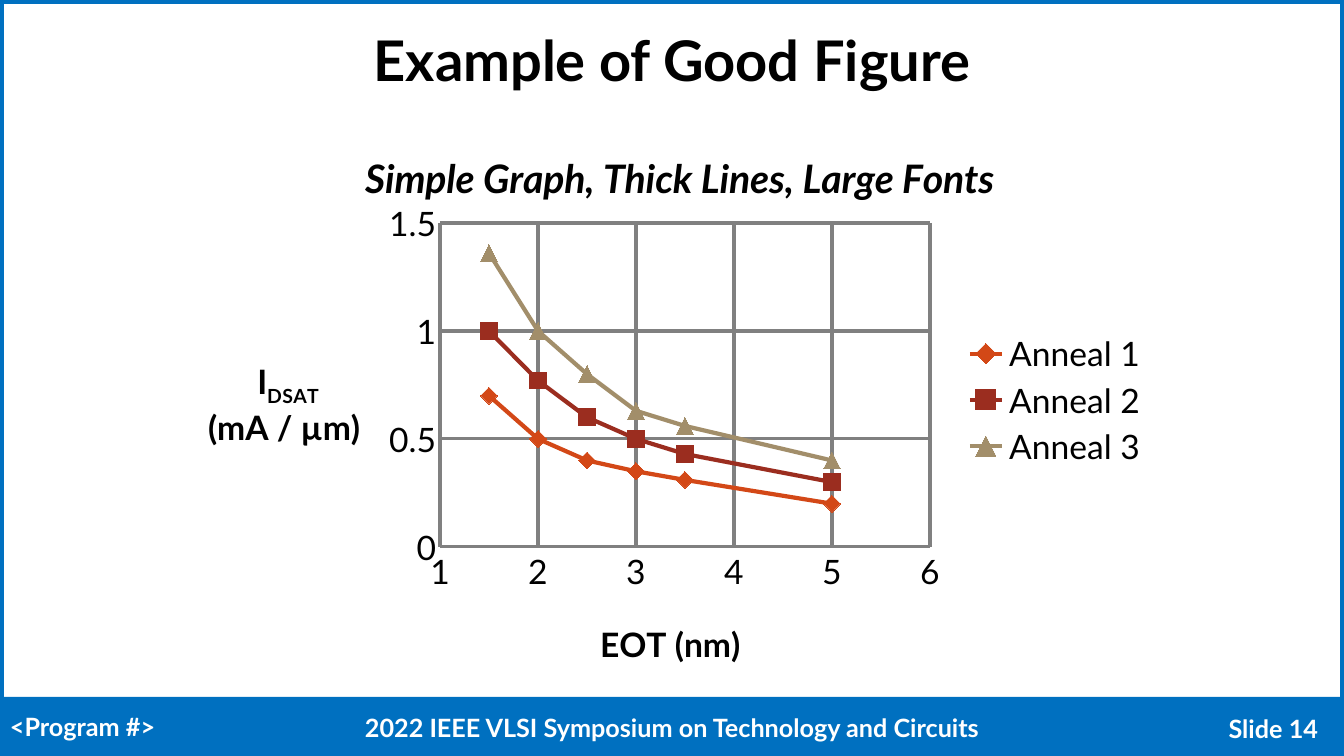
from lxml import etree
from pptx import Presentation
from pptx.chart.data import XyChartData
from pptx.dml.color import RGBColor
from pptx.enum.chart import XL_CHART_TYPE as ChartType, XL_LEGEND_POSITION as LegendPos
from pptx.enum.chart import XL_MARKER_STYLE as Marker, XL_TICK_MARK as Tick
from pptx.enum.shapes import MSO_SHAPE as Shape
from pptx.enum.text import MSO_ANCHOR as Anchor, PP_ALIGN as Align
from pptx.oxml.ns import qn
from pptx.util import Pt

PX = 914400 / 100.8
SLIDE = (0, 0, 1344, 756)
FONT = "Lato"
BLUE = RGBColor(0x00, 0x70, 0xC0)
WHITE = RGBColor(0xFF, 0xFF, 0xFF)
BLACK = RGBColor(0x00, 0x00, 0x00)
GRID_GRAY = RGBColor(0x80, 0x80, 0x80)

EOT = (1.5, 2, 2.5, 3, 3.5, 5)
ANNEALS = (
    ("Anneal 1", (0.7, 0.5, 0.4, 0.35, 0.31, 0.2), RGBColor(0xD3, 0x48, 0x17), Marker.DIAMOND),
    ("Anneal 2", (1, 0.77, 0.6, 0.5, 0.43, 0.3), RGBColor(0x9B, 0x2D, 0x1F), Marker.SQUARE),
    ("Anneal 3", (1.36, 1, 0.8, 0.63, 0.56, 0.4), RGBColor(0xA2, 0x8E, 0x6A), Marker.TRIANGLE),
)


def emu(*lengths):
    return [round(length * PX) for length in lengths]


def style(font, size, color, bold=False, italic=False):
    font.name, font.size, font.bold, font.italic = FONT, Pt(size), bold, italic
    font.color.rgb = color


def add_text(slide, box, text, size, color, align):
    frame = slide.shapes.add_textbox(*emu(*box)).text_frame
    frame.word_wrap = True
    frame.vertical_anchor = Anchor.MIDDLE
    paragraph = frame.paragraphs[0]
    paragraph.alignment = align
    run = paragraph.add_run()
    run.text = text
    style(run.font, size, color, bold=True)


def add_frame(slide, box):
    """Blue footer band and border around the slide."""
    left, top, width, height = box
    band_height = 59
    band = slide.shapes.add_shape(
        Shape.RECTANGLE, *emu(left, top + height - band_height, width, band_height))
    band.fill.solid()
    band.fill.fore_color.rgb = BLUE
    band.line.fill.background()
    border = slide.shapes.add_shape(Shape.RECTANGLE, *emu(*box))
    border.fill.background()
    border.line.color.rgb = BLUE
    border.line.width = Pt(6)
    for part in (band, border):
        part.shadow.inherit = False


def add_footer(slide, box):
    left, top, width, height = box
    add_text(slide, (left, top, 420, height), "<Program #>", 18, WHITE, Align.LEFT)
    add_text(slide, (left + 202, top + 1, width - 404, height),
             "2022 IEEE VLSI Symposium on Technology and Circuits", 18, WHITE, Align.CENTER)
    add_text(slide, (left + width - 375, top + 2, 359, height), "Slide 14", 18, WHITE, Align.RIGHT)


def place(element, chart_box, **offsets):
    """Fix the layout of a chart part; offsets are px inside the chart."""
    layout = element.find(qn("c:layout"))
    if layout is None:
        layout = etree.Element(qn("c:layout"))
        leads = (qn("c:tx"), qn("c:legendPos"))
        element.insert(sum(child.tag in leads for child in element), layout)
    for child in list(layout):
        layout.remove(child)
    manual = etree.SubElement(layout, qn("c:manualLayout"))
    settings = [("layoutTarget", "inner")] if element.tag == qn("c:plotArea") else []
    settings += [("xMode", "edge"), ("yMode", "edge")]
    spans = {"x": chart_box[2], "y": chart_box[3], "w": chart_box[2], "h": chart_box[3]}
    settings += [(key, f"{px / spans[key]:.4f}") for key, px in offsets.items()]
    for tag, value in settings:
        etree.SubElement(manual, qn("c:" + tag)).set("val", value)


def write_title(frame, lines, size, italic=False):
    """Each line is a list of (text, is_subscript) runs."""
    for index, line in enumerate(lines):
        paragraph = frame.add_paragraph() if index else frame.paragraphs[0]
        paragraph.alignment = Align.CENTER
        for text, is_subscript in line:
            run = paragraph.add_run()
            run.text = text
            style(run.font, size, BLACK, bold=True, italic=italic)
            if is_subscript:
                run.font._element.set("baseline", "-25000")


def set_axis(axis, low, high, step):
    axis.minimum_scale, axis.maximum_scale, axis.major_unit = low, high, step
    axis.major_tick_mark = axis.minor_tick_mark = Tick.NONE
    axis.has_major_gridlines = True
    for line in (axis.format.line, axis.major_gridlines.format.line):
        line.color.rgb = GRID_GRAY
        line.width = Pt(2.25)
    style(axis.tick_labels.font, 24, BLACK)
    axis.tick_labels.number_format = "General"
    axis.tick_labels.number_format_is_linked = False


def add_anneal_chart(slide, box):
    data = XyChartData()
    for name, currents, _, _ in ANNEALS:
        series = data.add_series(name)
        for point in zip(EOT, currents):
            series.add_data_point(*point)
    chart = slide.shapes.add_chart(ChartType.XY_SCATTER_LINES, *emu(*box), data).chart
    style(chart.font, 24, BLACK)

    # Lines and markers
    plot = chart.plots[0]
    plot.vary_by_categories = False
    for series, (_, _, color, marker) in zip(plot.series, ANNEALS):
        series.smooth = False
        series.format.line.color.rgb = color
        series.format.line.width = Pt(3)
        series.marker.style = marker
        series.marker.size = 12
        series.marker.format.fill.solid()
        series.marker.format.fill.fore_color.rgb = color
        series.marker.format.line.fill.background()

    # Axes
    eot_axis, current_axis = chart.category_axis, chart.value_axis
    set_axis(eot_axis, 1, 6, 1)
    set_axis(current_axis, 0, 1.5, 0.5)

    # Titles
    chart.has_title = True
    heading, eot_title, current_title = chart.chart_title, eot_axis.axis_title, current_axis.axis_title
    write_title(heading.text_frame, [[("Simple Graph, Thick Lines, Large Fonts", False)]], 28, italic=True)
    write_title(eot_title.text_frame, [[("EOT (nm)", False)]], 24)
    write_title(current_title.text_frame,
                [[("I", False), ("DSAT", True)], [("(mA / µm) ", False)]], 24)
    upright = current_title._element.find(".//" + qn("a:bodyPr"))
    upright.set("rot", "0")
    upright.set("vert", "horz")

    # Legend
    chart.has_legend = True
    chart.legend.position = LegendPos.RIGHT
    chart.legend.include_in_layout = False
    style(chart.legend.font, 24, BLACK)

    # Places inside the chart
    plot_area = chart._chartSpace.find(".//" + qn("c:plotArea"))
    place(plot_area, box, x=256, y=105, w=490, h=324)
    place(heading._element, box, x=174, y=25)
    place(eot_title._element, box, x=410, y=496)
    place(current_title._element, box, x=21, y=238)
    place(chart.legend._element, box, x=780, y=210, w=182, h=144)


def main():
    prs = Presentation()
    prs.slide_width, prs.slide_height = emu(*SLIDE[2:])
    slide = prs.slides.add_slide(prs.slide_layouts[6])
    add_frame(slide, SLIDE)
    add_text(slide, (22, 25, 1300, 68), "Example of Good Figure", 40, BLACK, Align.CENTER)
    add_anneal_chart(slide, (184, 118, 975, 563))
    add_footer(slide, (0, 706, 1344, 40))
    prs.save("out.pptx")


if __name__ == "__main__":
    main()
